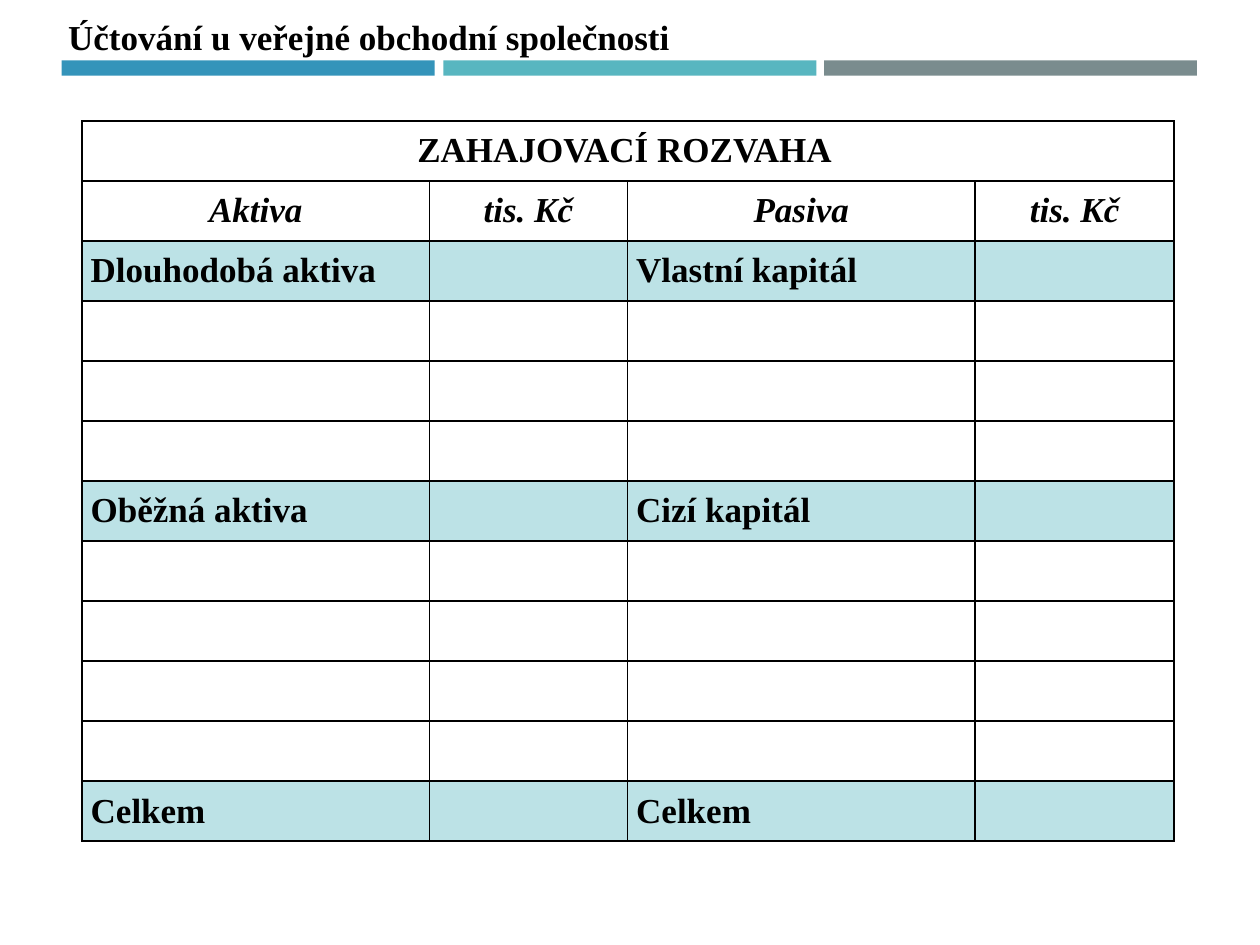
from dataclasses import dataclass

from lxml.etree import SubElement
from pptx import Presentation
from pptx.dml.color import RGBColor
from pptx.enum.shapes import MSO_SHAPE
from pptx.enum.text import MSO_ANCHOR, MSO_AUTO_SIZE, PP_ALIGN
from pptx.oxml.ns import qn
from pptx.slide import Slide
from pptx.table import Table, _Cell
from pptx.text.text import TextFrame
from pptx.util import Inches, Pt

COLORS = {
    "text": "000000",
    "border": "000000",
    "paper": "FFFFFF",
    "section": "BCE2E6",
    "blue": "3494BA",
    "teal": "58B6C0",
    "gray": "7A8C8E",
}
FONT = "Times New Roman"
ROW_COUNT = 12
COLUMN_WIDTHS = (2.76, 1.57, 2.76, 1.58)


@dataclass(frozen=True)
class Bar:
    left: float
    color: str


@dataclass(frozen=True)
class Section:
    row: int
    assets: str
    liabilities: str


BARS = [Bar(0.49, "blue"), Bar(3.52, "teal"), Bar(6.54, "gray")]
HEADINGS = ("Aktiva", "tis. Kč", "Pasiva", "tis. Kč")
SECTIONS = [
    Section(2, "Dlouhodobá aktiva", "Vlastní kapitál"),
    Section(6, "Oběžná aktiva", "Cizí kapitál"),
    Section(11, "Celkem", "Celkem"),
]


def rgb(name: str) -> RGBColor:
    return RGBColor.from_string(COLORS[name])


def write(frame: TextFrame, text: str, align: PP_ALIGN, italic: bool = False) -> None:
    frame.text = text
    paragraph = frame.paragraphs[0]
    paragraph.alignment = align
    font = paragraph.runs[0].font
    font.name, font.size = FONT, Pt(20)
    font.bold, font.italic = True, italic
    font.color.rgb = rgb("text")


def write_cell(cell: _Cell, text: str, align: PP_ALIGN, italic: bool = False) -> None:
    cell.margin_left = cell.margin_right = Inches(0.07)
    cell.margin_top = cell.margin_bottom = 0
    cell.vertical_anchor = MSO_ANCHOR.MIDDLE
    write(cell.text_frame, text, align, italic)


def style_cell(cell: _Cell, color: str) -> None:
    properties = cell._tc.get_or_add_tcPr()
    for side in ("a:lnL", "a:lnR", "a:lnT", "a:lnB"):
        line = SubElement(properties, qn(side), w=str(Pt(1)))
        line_fill = SubElement(line, qn("a:solidFill"))
        SubElement(line_fill, qn("a:srgbClr"), val=COLORS["border"])
    cell.fill.solid()
    cell.fill.fore_color.rgb = rgb(color)


def add_bar(slide: Slide, bar: Bar) -> None:
    stripe = slide.shapes.add_shape(
        MSO_SHAPE.RECTANGLE, Inches(bar.left), Inches(0.48), Inches(2.96), Inches(0.12)
    )
    stripe.shadow.inherit = False
    stripe.fill.solid()
    stripe.fill.fore_color.rgb = rgb(bar.color)
    stripe.line.fill.background()


def add_title(slide: Slide, text: str) -> None:
    title = slide.shapes.title
    title.left, title.top = Inches(0.44), Inches(0.07)
    title.width, title.height = Inches(5.01), Inches(0.44)
    frame = title.text_frame
    write(frame, text, PP_ALIGN.LEFT)
    frame.word_wrap = False
    frame.auto_size = MSO_AUTO_SIZE.SHAPE_TO_FIT_TEXT
    frame.vertical_anchor = MSO_ANCHOR.TOP


def add_balance_sheet(slide: Slide) -> Table:
    sheet = slide.shapes.add_table(
        ROW_COUNT, len(COLUMN_WIDTHS),
        Inches(0.65), Inches(0.96), Inches(sum(COLUMN_WIDTHS)), Inches(5.72),
    ).table
    sheet.first_row = sheet.horz_banding = False
    for column, width in zip(sheet.columns, COLUMN_WIDTHS):
        column.width = Inches(width)

    # Borders and fills
    section_rows = {section.row for section in SECTIONS}
    for row_index, row in enumerate(sheet.rows):
        for cell in row.cells:
            style_cell(cell, "section" if row_index in section_rows else "paper")

    # Heading rows
    heading = sheet.cell(0, 0)
    heading.merge(sheet.cell(0, len(COLUMN_WIDTHS) - 1))
    write_cell(heading, "ZAHAJOVACÍ ROZVAHA ", PP_ALIGN.CENTER)
    heading.text_frame.paragraphs[0].space_before = Pt(6)
    for column_index, label in enumerate(HEADINGS):
        write_cell(sheet.cell(1, column_index), label, PP_ALIGN.CENTER, italic=True)

    # Section rows
    for section in SECTIONS:
        write_cell(sheet.cell(section.row, 0), section.assets, PP_ALIGN.LEFT)
        write_cell(sheet.cell(section.row, 2), section.liabilities, PP_ALIGN.JUSTIFY)
    return sheet


def main() -> None:
    presentation = Presentation()
    presentation.slide_width, presentation.slide_height = Inches(10), Inches(7.5)
    slide = presentation.slides.add_slide(presentation.slide_layouts[5])
    for bar in BARS:
        add_bar(slide, bar)
    add_title(slide, "Účtování u veřejné obchodní společnosti")
    add_balance_sheet(slide)
    presentation.save("out.pptx")


if __name__ == "__main__":
    main()
